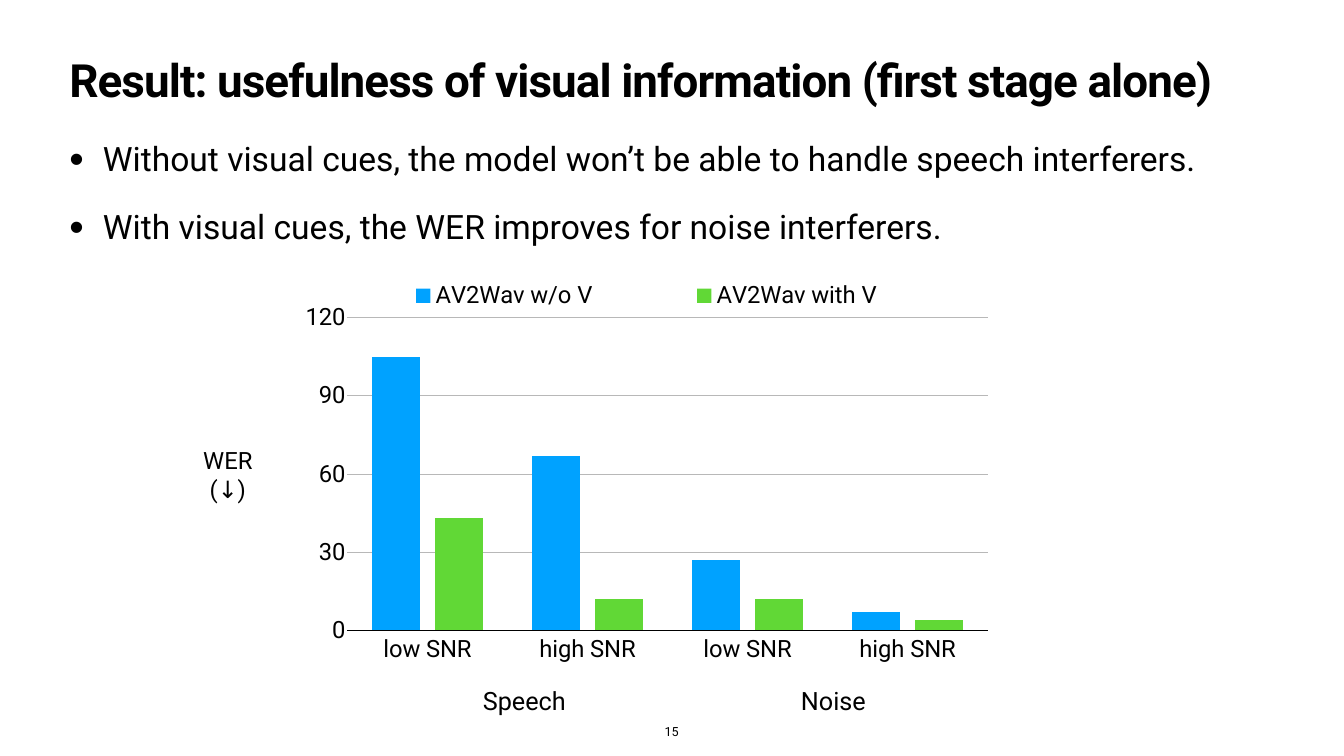
"""Build the slide on the usefulness of visual information for speech recovery."""
from lxml import etree
from pptx import Presentation
from pptx.chart.data import CategoryChartData
from pptx.dml.color import RGBColor
from pptx.enum.chart import XL_CHART_TYPE, XL_LEGEND_POSITION, XL_TICK_LABEL_POSITION, XL_TICK_MARK
from pptx.enum.text import MSO_ANCHOR, MSO_AUTO_SIZE, PP_ALIGN
from pptx.oxml import parse_xml
from pptx.oxml.ns import nsdecls, qn
from pptx.util import Pt

COLUMN = XL_CHART_TYPE.COLUMN_CLUSTERED
TOP_LEGEND = XL_LEGEND_POSITION.TOP
LOW = XL_TICK_LABEL_POSITION.LOW
NO_TICK = XL_TICK_MARK.NONE
TOP, MIDDLE, BOTTOM = MSO_ANCHOR.TOP, MSO_ANCHOR.MIDDLE, MSO_ANCHOR.BOTTOM
NO_FIT = MSO_AUTO_SIZE.NONE
LEFT, CENTER = PP_ALIGN.LEFT, PP_ALIGN.CENTER
BLACK = RGBColor(0, 0, 0)
GRAY = RGBColor(0xB8, 0xB8, 0xB8)
BLUE = RGBColor(0x00, 0xA2, 0xFF)
GREEN = RGBColor(0x61, 0xD8, 0x36)
FONT = "Roboto"
CHART_SIZE = 34
INSET = 4
INDENT = 48

TITLE = "Result: usefulness of visual information (first stage alone)"
BULLETS = [
    "Without visual cues, the model won’t be able to handle speech interferers.",
    "With visual cues, the WER improves for noise interferers.",
]
CATEGORIES = ["low SNR", "high SNR"] * 2
SERIES = [
    ("AV2Wav w/o V", (105, 67, 27, 7), BLUE),
    ("AV2Wav with V", (43, 12, 12, 4), GREEN),
]
TITLE_BOX = (95, 85, 1730, 113)
BODY_BOX = (95, 200, 1730, 650)
CHART_BOX = (416, 397, 1005, 566)
PLOT_LAYOUT = (0.08, 0.1, 0.91, 0.79)
LEGEND_LAYOUT = (0.04, 0, 0.93, 0.09)
LABELS = [
    ("Speech", (626, 976, 246, 50), 36, MIDDLE, True),
    ("Noise", (1140, 976, 101, 50), 36, MIDDLE, False),
    ("15", (945, 1030, 29, 30), 18, BOTTOM, False),
    ("WER (↓)", (282, 654, 87, 48), CHART_SIZE, MIDDLE, True),
]


def style_font(font, size):
    font.name = FONT
    font.size = Pt(size)
    font.color.rgb = BLACK


def fill_text(shape, lines, size, align, anchor, wrap=True):
    tf = shape.text_frame
    tf.text = "\n".join(lines)
    tf.word_wrap = wrap
    tf.auto_size = NO_FIT
    tf.vertical_anchor = anchor
    tf.margin_left = tf.margin_right = tf.margin_top = tf.margin_bottom = Pt(INSET)
    for p in tf.paragraphs:
        p.alignment = align
        for r in p.runs:
            style_font(r.font, size)
    return tf


def place(shape, box):
    shape.left, shape.top, shape.width, shape.height = map(Pt, box)


def add_bullet(p):
    pPr = p._p.get_or_add_pPr()
    pPr.set("marL", str(Pt(INDENT)))
    pPr.set("indent", str(-Pt(INDENT)))
    etree.SubElement(pPr, qn("a:buSzPct")).set("val", "123000")
    etree.SubElement(pPr, qn("a:buChar")).set("char", "•")


def layout_xml(box, inner=False):
    target = '<c:layoutTarget val="inner"/>' if inner else ""
    sizes = "".join(f'<c:{k} val="{v}"/>' for k, v in zip("xywh", box))
    return parse_xml(
        f'<c:layout {nsdecls("c")}><c:manualLayout>{target}'
        f'<c:xMode val="edge"/><c:yMode val="edge"/>{sizes}</c:manualLayout></c:layout>'
    )


def add_wer_chart(s):
    data = CategoryChartData()
    data.categories = CATEGORIES
    for name, values, _ in SERIES:
        data.add_series(name, values)
    chart = s.shapes.add_chart(COLUMN, *map(Pt, CHART_BOX), data).chart
    chart.has_title = False
    style_font(chart.font, CHART_SIZE)

    chart.has_legend = True
    legend = chart.legend
    legend.position = TOP_LEGEND
    legend.include_in_layout = True
    style_font(legend.font, CHART_SIZE)
    for old in legend._element.findall(qn("c:layout")):
        legend._element.remove(old)
    legend._element.find(qn("c:legendPos")).addnext(layout_xml(LEGEND_LAYOUT))
    plot_area = chart._chartSpace.chart.plotArea
    for old in plot_area.findall(qn("c:layout")):
        plot_area.remove(old)
    plot_area.insert(0, layout_xml(PLOT_LAYOUT, inner=True))

    plot = chart.plots[0]
    plot.gap_width = 100
    plot.overlap = -30
    plot.vary_by_categories = False
    for series, (_, _, color) in zip(plot.series, SERIES):
        series.format.fill.solid()
        series.format.fill.fore_color.rgb = color

    cat, val = chart.category_axis, chart.value_axis
    for axis in (cat, val):
        axis.major_tick_mark = axis.minor_tick_mark = NO_TICK
        style_font(axis.tick_labels.font, CHART_SIZE)
    cat.tick_label_position = LOW
    cat.format.line.color.rgb = BLACK
    cat.format.line.width = Pt(1)
    val.minimum_scale, val.maximum_scale, val.major_unit = 0, 120, 30
    val.format.line.fill.background()
    val.has_major_gridlines = True
    val.major_gridlines.format.line.color.rgb = GRAY
    val.major_gridlines.format.line.width = Pt(1)


def main():
    prs = Presentation()
    prs.slide_width, prs.slide_height = Pt(1920), Pt(1080)
    s = prs.slides.add_slide(prs.slide_layouts[1])
    title, body = s.placeholders

    place(title, TITLE_BOX)
    p = fill_text(title, [TITLE], 65.4, LEFT, TOP).paragraphs[0]
    p.line_spacing = 0.8
    p.runs[0].font.bold = True
    p.runs[0]._r.get_or_add_rPr().set("spc", "-130")

    place(body, BODY_BOX)
    for p in fill_text(body, BULLETS, 48, LEFT, TOP).paragraphs:
        p.line_spacing = 0.9
        p.space_before = Pt(45)
        add_bullet(p)

    add_wer_chart(s)
    for text, box, size, anchor, wrap in LABELS:
        fill_text(s.shapes.add_textbox(*map(Pt, box)), [text], size, CENTER, anchor, wrap)
    prs.save("out.pptx")


if __name__ == "__main__":
    main()
